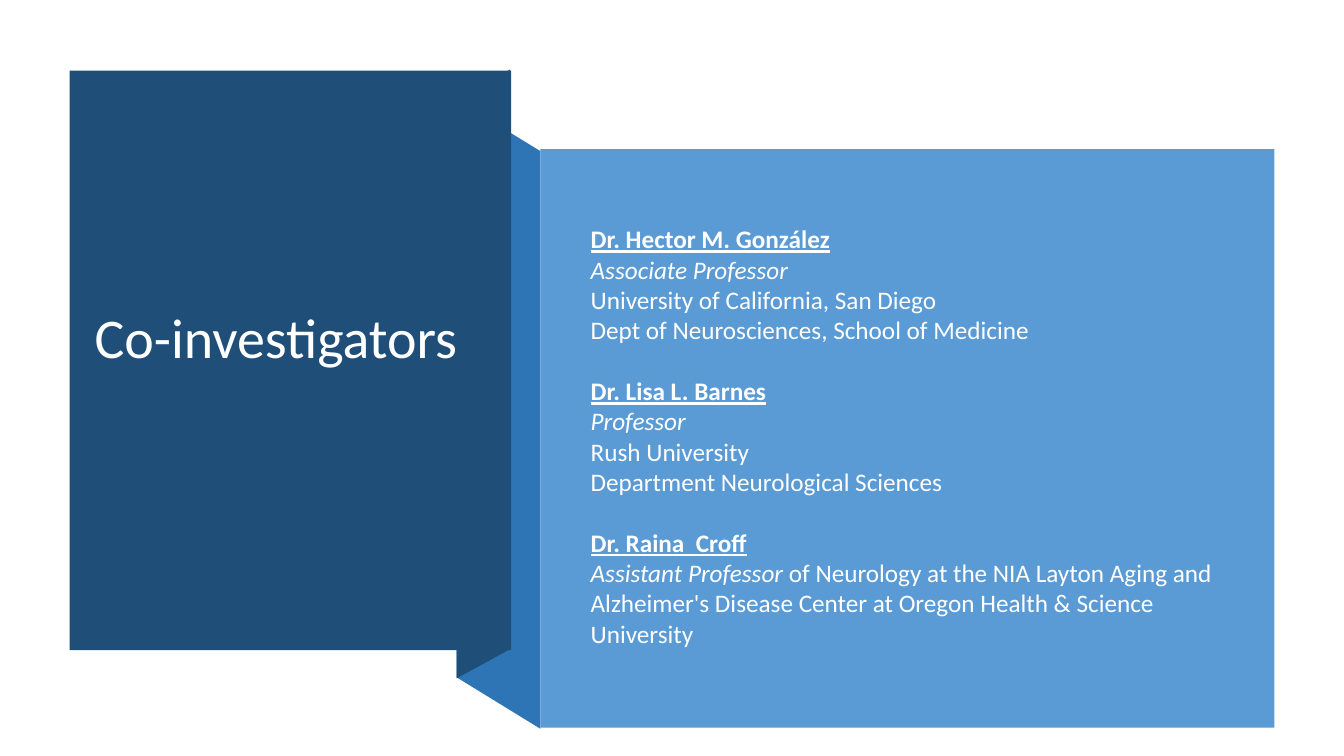
from pptx import Presentation
from pptx.dml.color import RGBColor
from pptx.enum.shapes import MSO_SHAPE as SHAPE
from pptx.enum.text import MSO_ANCHOR as ANCHOR
from pptx.util import Inches, Pt

NAVY, BLUE, SKY, WHITE = "1F4E79", "2E75B6", "5B9BD5", "FFFFFF"
FONT = "Calibri"

INVESTIGATORS = [
    ("Dr. Hector M. González", [
        ("Associate Professor", ""),
        ("", "University of California, San Diego"),
        ("", "Dept of Neurosciences, School of Medicine")]),
    ("Dr. Lisa L. Barnes", [
        ("Professor", ""),
        ("", "Rush University"),
        ("", "Department Neurological Sciences")]),
    ("Dr. Raina  Croff", [
        ("Assistant Professor ",
         "of Neurology at the NIA Layton Aging and Alzheimer's Disease Center "
         "at Oregon Health & Science University")]),
]


def rgb(color):
    return RGBColor.from_string(color)


def paint(s, color):
    s.shadow.inherit = False
    s.fill.solid()
    s.fill.fore_color.rgb = rgb(color)
    s.line.fill.background()


def add_panel(sp, x, y, w, h, color):
    s = sp.add_shape(SHAPE.RECTANGLE, Inches(x), Inches(y), Inches(w), Inches(h))
    paint(s, color)


def add_fold(sp, points, color):
    corners = [(Inches(x), Inches(y)) for x, y in points]
    builder = sp.build_freeform(*corners[0])
    builder.add_line_segments(corners[1:], close=True)
    paint(builder.convert_to_shape(), color)


def add_text_frame(sp, x, y, w, h):
    s = sp.add_textbox(Inches(x), Inches(y), Inches(w), Inches(h))
    tf = s.text_frame
    tf.word_wrap = True
    tf.vertical_anchor = ANCHOR.MIDDLE
    return tf


def add_run(p, text, size, bold=False, italic=False, underline=False):
    r = p.add_run()
    r.text = text
    r.font.name = FONT
    r.font.size = Pt(size)
    r.font.color.rgb = rgb(WHITE)
    r.font.bold = bold
    r.font.italic = italic
    r.font.underline = underline


def add_title(sp, text):
    p = add_text_frame(sp, 0.84, 0.69, 3.89, 5.37).paragraphs[0]
    p.line_spacing = 0.9
    add_run(p, text, 40)


def add_investigators(sp, investigators):
    tf = add_text_frame(sp, 5.76, 1.64, 6.65, 5.37)
    for i, (name, lines) in enumerate(investigators):
        p = tf.add_paragraph() if i else tf.paragraphs[0]
        if i:
            p.space_before = Pt(22)
        add_run(p, name, 18, bold=True, underline=True)
        for role, detail in lines:
            p = tf.add_paragraph()
            if role:
                add_run(p, role, 18, italic=True)
            if detail:
                add_run(p, detail, 18)


def main():
    prs = Presentation()
    prs.slide_width, prs.slide_height = Inches(13.33), Inches(7.5)
    sp = prs.slides.add_slide(prs.slide_layouts[6]).shapes
    add_fold(sp, [(5.36, 7.23), (4.53, 6.72), (4.53, 0.99), (5.36, 1.5)], BLUE)
    add_fold(sp, [(5.06, 6.44), (4.53, 6.73), (4.53, 0.98), (5.06, 0.69)], NAVY)
    add_panel(sp, 0.69, 0.7, 4.38, 5.75, NAVY)
    add_title(sp, "Co-investigators")
    add_panel(sp, 5.36, 1.48, 7.28, 5.74, SKY)
    add_investigators(sp, INVESTIGATORS)
    prs.save("out.pptx")


if __name__ == "__main__":
    main()
